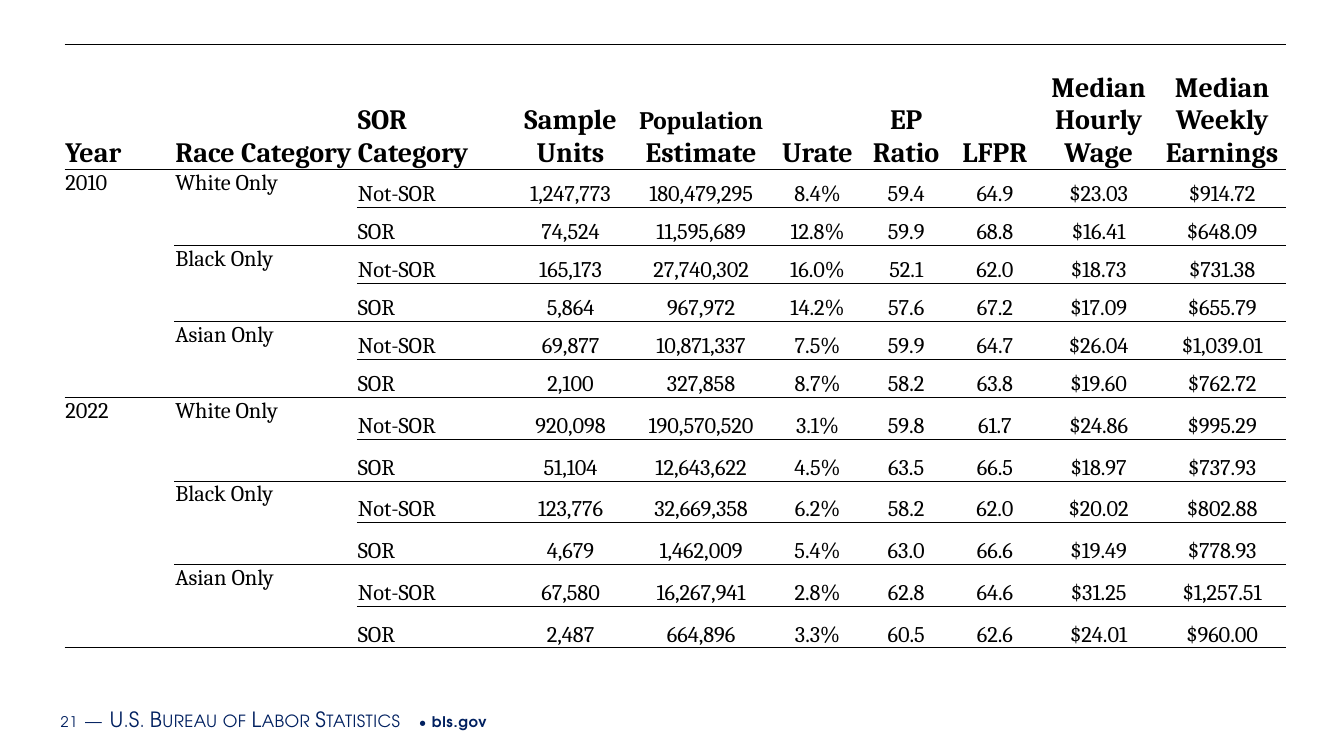
from dataclasses import dataclass

from lxml import etree
from pptx import Presentation
from pptx.dml.color import RGBColor
from pptx.enum.text import MSO_ANCHOR, PP_ALIGN
from pptx.oxml.ns import qn
from pptx.util import Inches, Pt

TOP, MIDDLE, BOTTOM = MSO_ANCHOR.TOP, MSO_ANCHOR.MIDDLE, MSO_ANCHOR.BOTTOM
LEFT, CENTER = PP_ALIGN.LEFT, PP_ALIGN.CENTER
SLIDE_WIDTH, SLIDE_HEIGHT = Inches(13.33), Inches(7.5)
BLACK, NAVY = "000000", "002060"
TABLE_FONT, FOOTER_FONT = "Cambria", "TeX Gyre Adventor"
PLAIN_TABLE_STYLE = "{2D5ABB26-0587-4C30-8999-92F81FD0307C}"
YEAR_ROWS, RACE_ROWS = 6, 2
RACES = ["White Only", "Black Only", "Asian Only"]
SOR_CATEGORIES = ["Not-SOR", "SOR"]

# Row heights, as percentages of the slide height
HEADER_HEIGHT = 16.53
YEAR_ROW_HEIGHTS = {"2010": 5.03, "2022": 5.52}


@dataclass
class Column:
    heading: str
    width: float  # percentage of the slide width
    align: PP_ALIGN = CENTER


@dataclass
class FooterPart:
    text: str
    size: float
    spacing: float = 0.5
    bold: bool = False
    small_caps: bool = False


COLUMNS = [
    Column("Year", 8.18, LEFT),
    Column("Race Category", 13.58, LEFT),
    Column("SOR Category", 11.55, LEFT),
    Column("Sample Units", 8.7),
    Column("Population Estimate", 10.73),
    Column("Urate", 6.6),
    Column("EP Ratio", 6.6),
    Column("LFPR", 6.6),
    Column("Median Hourly Wage", 8.85),
    Column("Median Weekly Earnings", 9.53),
]

# One line per year, race and SOR category, in table order
FIGURES = [
    "1,247,773 180,479,295 8.4% 59.4 64.9 $23.03 $914.72",
    "74,524 11,595,689 12.8% 59.9 68.8 $16.41 $648.09",
    "165,173 27,740,302 16.0% 52.1 62.0 $18.73 $731.38",
    "5,864 967,972 14.2% 57.6 67.2 $17.09 $655.79",
    "69,877 10,871,337 7.5% 59.9 64.7 $26.04 $1,039.01",
    "2,100 327,858 8.7% 58.2 63.8 $19.60 $762.72",
    "920,098 190,570,520 3.1% 59.8 61.7 $24.86 $995.29",
    "51,104 12,643,622 4.5% 63.5 66.5 $18.97 $737.93",
    "123,776 32,669,358 6.2% 58.2 62.0 $20.02 $802.88",
    "4,679 1,462,009 5.4% 63.0 66.6 $19.49 $778.93",
    "67,580 16,267,941 2.8% 62.8 64.6 $31.25 $1,257.51",
    "2,487 664,896 3.3% 60.5 62.6 $24.01 $960.00",
]

FOOTER = [
    FooterPart("21", 10.5),
    FooterPart(" ", 16),
    FooterPart("—", 15, 0.3, small_caps=True),
    FooterPart(" ", 16),
    FooterPart("U.S. Bureau of Labor Statistics", 15, 0.3, small_caps=True),
    FooterPart(" • ", 10.5),
    FooterPart("bls.gov", 10.5, bold=True),
]


def across(percent: float) -> int:
    return round(SLIDE_WIDTH * percent / 100)


def down(percent: float) -> int:
    return round(SLIDE_HEIGHT * percent / 100)


def color(value: str) -> RGBColor:
    return RGBColor.from_string(value)


def add_text(paragraph, text: str, *, size: float, font: str = TABLE_FONT,
             fill: str = BLACK, bold: bool = False, spacing: float = 0,
             small_caps: bool = False) -> None:
    run = paragraph.add_run()
    run.text = text
    run.font.name = font
    run.font.size = Pt(size)
    run.font.bold = bold
    run.font.color.rgb = color(fill)
    properties = run._r.get_or_add_rPr()
    if spacing:
        properties.set("spc", str(round(spacing * 100)))
    if small_caps:
        properties.set("cap", "small")


def add_rules(cell, top: bool, bottom: bool) -> None:
    """Draw the thin horizontal lines of a cell."""
    properties = cell._tc.get_or_add_tcPr()
    edges = [tag for tag, wanted in (("a:lnT", top), ("a:lnB", bottom)) if wanted]
    for position, tag in enumerate(edges):
        line = etree.Element(qn(tag), w=str(Pt(0.5)))
        solid = etree.SubElement(line, qn("a:solidFill"))
        etree.SubElement(solid, qn("a:srgbClr"), val=BLACK)
        properties.insert(position, line)


def format_cell(cell, align: PP_ALIGN, anchor: MSO_ANCHOR):
    cell.margin_left = cell.margin_right = cell.margin_top = Pt(0.7)
    cell.margin_bottom = 0
    cell.vertical_anchor = anchor
    cell.fill.background()
    paragraph = cell.text_frame.paragraphs[0]
    paragraph.alignment = align
    return paragraph


def fill_header(table) -> None:
    for index, column in enumerate(COLUMNS):
        cell = table.cell(0, index)
        paragraph = format_cell(cell, column.align, BOTTOM)
        first_word, space, rest = column.heading.partition(" ")
        if first_word == "Population":
            add_text(paragraph, first_word, size=18, bold=True)
            add_text(paragraph, space + rest, size=20, bold=True)
        else:
            add_text(paragraph, column.heading, size=20, bold=True)
        add_rules(cell, top=True, bottom=True)


def fill_body(table) -> None:
    years = list(YEAR_ROW_HEIGHTS)
    for row, figures in enumerate(FIGURES):
        labels = [years[row // YEAR_ROWS],
                  RACES[row % YEAR_ROWS // RACE_ROWS],
                  SOR_CATEGORIES[row % RACE_ROWS]]
        for index, text in enumerate(labels + figures.split()):
            cell = table.cell(row + 1, index)
            group = YEAR_ROWS if index == 0 else RACE_ROWS
            is_first = row % group == 0
            is_last = row % group == group - 1
            is_merged = index < 2
            paragraph = format_cell(cell, COLUMNS[index].align, TOP if is_merged else BOTTOM)
            if is_first or not is_merged:
                add_text(paragraph, text, size=16)
            add_rules(cell, is_first, is_last or (is_merged and is_first))
            if is_merged and is_first:
                cell.merge(table.cell(row + group, index))


def add_statistics_table(slide) -> None:
    heights = [HEADER_HEIGHT]
    for height in YEAR_ROW_HEIGHTS.values():
        heights += [height] * YEAR_ROWS
    frame = slide.shapes.add_table(
        len(heights), len(COLUMNS), across(4.8), down(5.87),
        across(sum(column.width for column in COLUMNS)), down(sum(heights)))
    table = frame.table
    table.first_row = table.horz_banding = False
    table._tbl.tblPr.find(qn("a:tableStyleId")).text = PLAIN_TABLE_STYLE
    for table_column, column in zip(table.columns, COLUMNS):
        table_column.width = across(column.width)
    for table_row, height in zip(table.rows, heights):
        table_row.height = down(height)
    fill_header(table)
    fill_body(table)


def add_footer(slide) -> None:
    box = slide.shapes.add_textbox(across(3.98), down(92.4), across(63.54), down(5.33))
    frame = box.text_frame
    frame.word_wrap = True
    frame.vertical_anchor = MIDDLE
    frame.margin_left = frame.margin_right = Inches(0.07)
    frame.margin_top = frame.margin_bottom = Inches(0.04)
    for part in FOOTER:
        add_text(frame.paragraphs[0], part.text, size=part.size, font=FOOTER_FONT,
                 fill=NAVY, bold=part.bold, spacing=part.spacing,
                 small_caps=part.small_caps)


def main() -> None:
    presentation = Presentation()
    presentation.slide_width, presentation.slide_height = SLIDE_WIDTH, SLIDE_HEIGHT
    slide = presentation.slides.add_slide(presentation.slide_layouts[6])
    add_footer(slide)
    add_statistics_table(slide)
    presentation.save("out.pptx")


if __name__ == "__main__":
    main()
